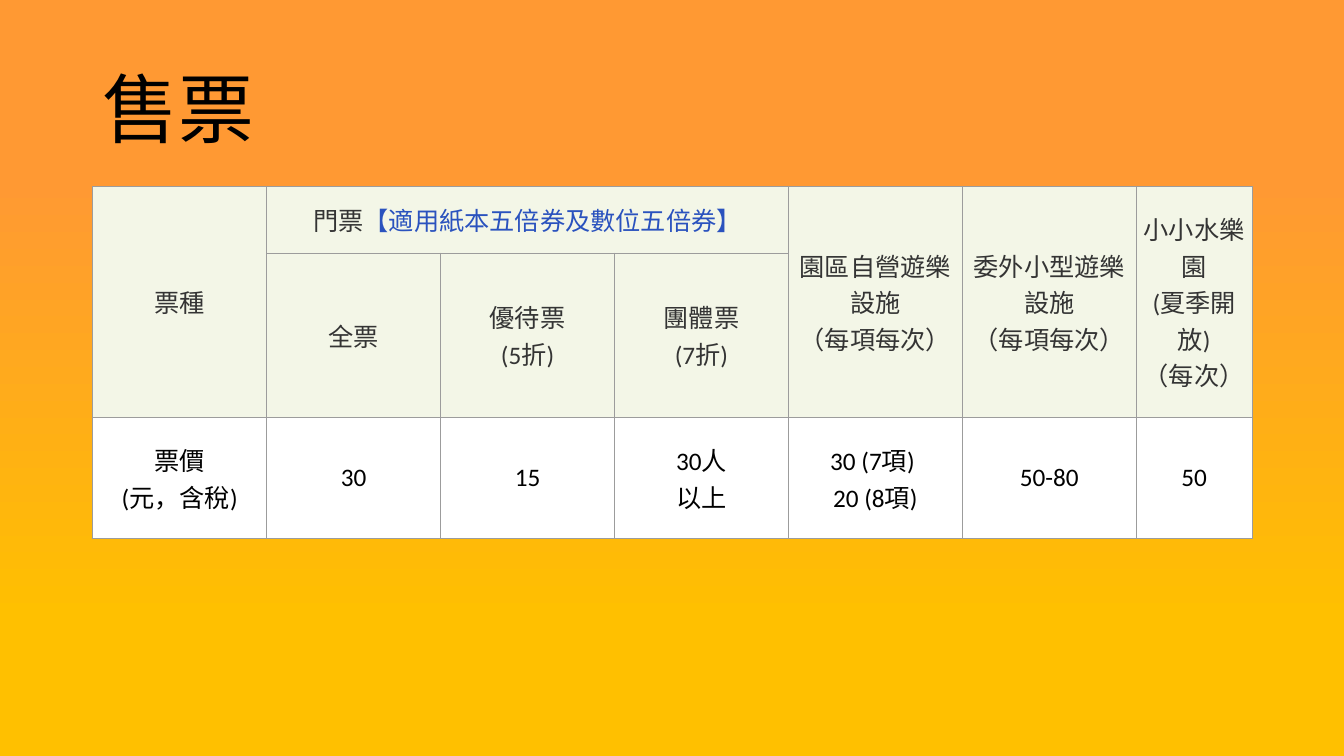
import pptx
import pptx.dml.color
import pptx.enum.text
import pptx.oxml
import pptx.oxml.ns
import pptx.util
from dataclasses import dataclass

Inches = pptx.util.Inches
Pt = pptx.util.Pt


@dataclass
class Theme:
    font: str = "Calibri"
    title_size: int = 54
    table_size: int = 18
    black: str = "000000"
    heading: str = "343434"
    voucher: str = "2A52BE"
    heading_fill: str = "F3F6E7"
    price_fill: str = "FFFFFF"
    border: str = "9C9C9C"
    border_width: float = 0.75
    backdrop: tuple = ((0.24, "FF9933"), (0.82, "FFC000"))


def rgb(value):
    return pptx.dml.color.RGBColor.from_string(value)


class TicketSlide:
    def __init__(self, slide, theme):
        self.slide = slide
        self.theme = theme

    def background(self):
        fill = self.slide.background.fill
        fill.gradient()
        fill.gradient_angle = 270
        for stop, (position, color) in zip(fill.gradient_stops, self.theme.backdrop):
            stop.position = position
            stop.color.rgb = rgb(color)

    def style(self, paragraph, size, color):
        paragraph.font.name = self.theme.font
        paragraph.font.size = Pt(size)
        paragraph.font.color.rgb = rgb(color)

    def title(self, text, left, top, width, height):
        box = self.slide.shapes.add_textbox(
            Inches(left), Inches(top), Inches(width), Inches(height))
        frame = box.text_frame
        frame.word_wrap = True
        frame.vertical_anchor = pptx.enum.text.MSO_ANCHOR.MIDDLE
        frame.text = text
        frame.paragraphs[0].line_spacing = 0.9
        self.style(frame.paragraphs[0], self.theme.title_size, self.theme.black)

    def borders(self, cell):
        properties = cell._tc.get_or_add_tcPr()
        namespace = pptx.oxml.ns.nsdecls("a")
        for index, side in enumerate(("lnL", "lnR", "lnT", "lnB")):
            properties.insert(index, pptx.oxml.parse_xml(
                f'<a:{side} {namespace} w="{Pt(self.theme.border_width)}"><a:solidFill>'
                f'<a:srgbClr val="{self.theme.border}"/></a:solidFill></a:{side}>'))

    def cell(self, cell, text, color, fill):
        cell.fill.solid()
        cell.fill.fore_color.rgb = rgb(fill)
        self.borders(cell)
        cell.vertical_anchor = pptx.enum.text.MSO_ANCHOR.MIDDLE
        cell.margin_left = cell.margin_right = Inches(0.03)
        cell.margin_top = cell.margin_bottom = Inches(0.03)
        cell.text_frame.text = text
        for paragraph in cell.text_frame.paragraphs:
            paragraph.alignment = pptx.enum.text.PP_ALIGN.CENTER
            self.style(paragraph, self.theme.table_size, color)

    def table(self, texts, spans, left, top, widths, heights):
        table = self.slide.shapes.add_table(
            len(heights), len(widths), Inches(left), Inches(top),
            Inches(sum(widths)), Inches(sum(heights))).table
        for column, width in zip(table.columns, widths):
            column.width = Inches(width)
        for row, height in zip(table.rows, heights):
            row.height = Inches(height)
        price_row = len(heights) - 1
        for r, row_texts in enumerate(texts):
            look = ((self.theme.black, self.theme.price_fill) if r == price_row
                    else (self.theme.heading, self.theme.heading_fill))
            for c, text in enumerate(row_texts):
                self.cell(table.cell(r, c), text, *look)
        for first, last in spans:
            table.cell(*first).merge(table.cell(*last))
        return table

    def accent(self, cell, text):
        run = cell.text_frame.paragraphs[0].add_run()
        run.text = text
        run.font.color.rgb = rgb(self.theme.voucher)


# "\v" breaks a line inside a paragraph; "\n" starts a new paragraph
TICKETS = [
    ["票種", "門票", "", "", "園區自營遊樂設施\v（每項每次）",
     "委外小型遊樂設施\v（每項每次）", "小小水樂園\v(夏季開放)\v（每次）"],
    ["", "全票", "優待票\v(5折)", "團體票\v(7折)", "", "", ""],
    ["票價\v(元，含稅)", "30", "15", "30人\v以上", "30 (7項) \n20 (8項)", "50-80", "50"],
]


def main():
    presentation = pptx.Presentation()
    presentation.slide_width = Inches(13.33)
    presentation.slide_height = Inches(7.5)
    slide = presentation.slides.add_slide(presentation.slide_layouts[6])
    tickets = TicketSlide(slide, Theme())

    # Background and title
    tickets.background()
    tickets.title("售票", 0.92, 0.4, 11.5, 1.45)

    # Price table: admission spans three columns, other headings two rows
    spans = [((0, 1), (0, 3))] + [((0, c), (1, c)) for c in (0, 4, 5, 6)]
    prices = tickets.table(TICKETS, spans, 0.92, 1.85,
                           [1.725] * 6 + [1.15], [0.66, 1.63, 1.2])
    tickets.accent(prices.cell(0, 1), "【適用紙本五倍券及數位五倍券】")

    presentation.save("out.pptx")


if __name__ == "__main__":
    main()
